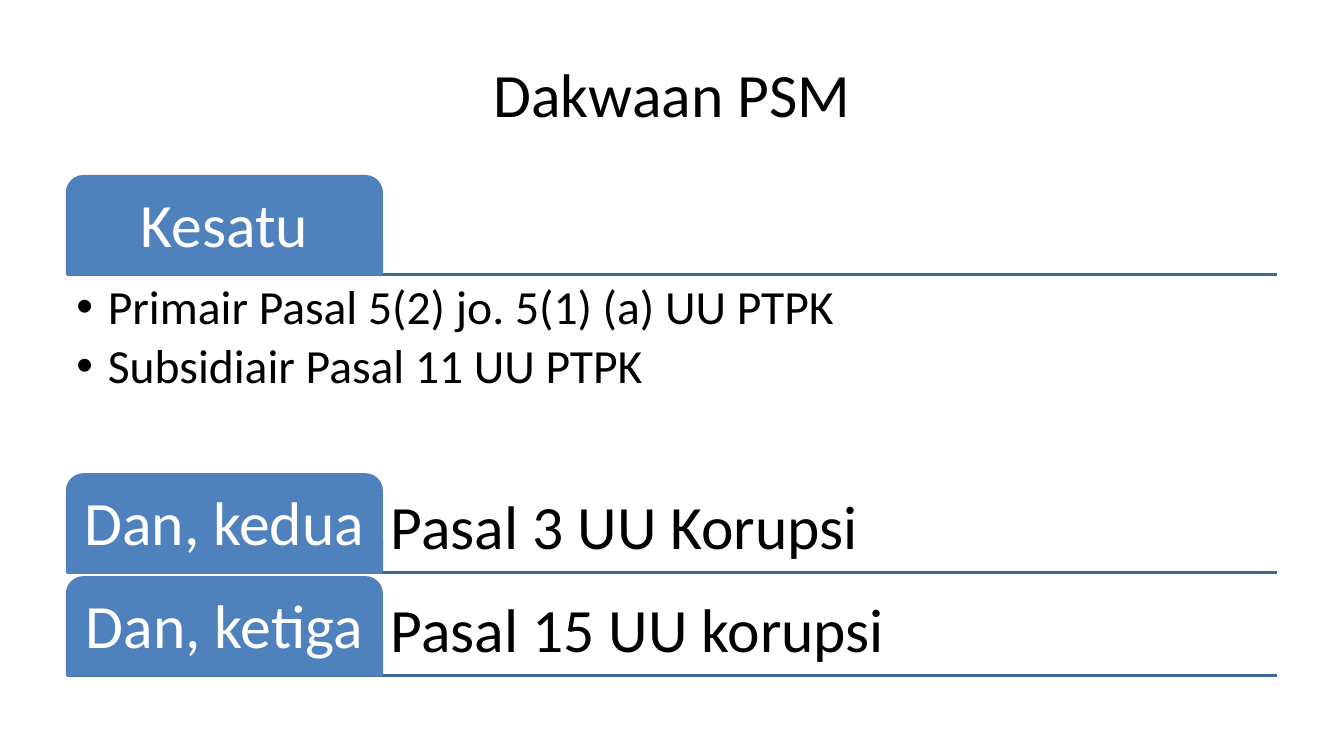
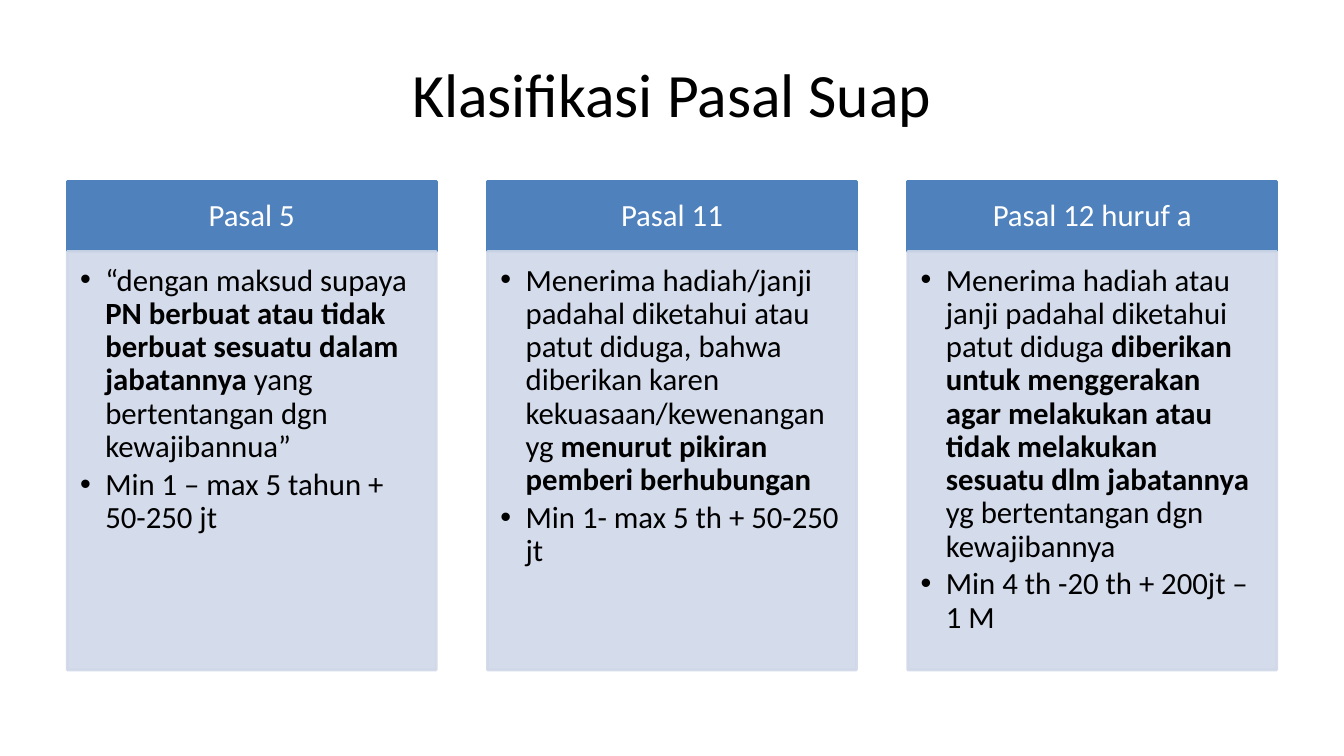
from pptx import Presentation
from pptx.dml.color import RGBColor
from pptx.enum.shapes import MSO_CONNECTOR, MSO_SHAPE
from pptx.enum.text import MSO_ANCHOR, PP_ALIGN
from pptx.oxml.ns import qn
from pptx.util import Pt
from lxml.etree import SubElement

FONT = "Calibri"
BLACK, WHITE = "000000", "FFFFFF"
BLUE, NAVY, PALE = "4F81BD", "3F6797", "D0D8E8"
LEFT, WIDTH = 48, 864


def color(code):
    return RGBColor.from_string(code)


class Deck:
    def __init__(self):
        self.prs = Presentation()
        self.prs.slide_width = Pt(960)
        self.prs.slide_height = Pt(540)

    def page(self, title):
        self.slide = self.prs.slides.add_slide(self.prs.slide_layouts[6])
        self.text(title, (LEFT, 21.6, WIDTH, 90), 44, (7.2, 3.6, 7.2, 3.6),
                  MSO_ANCHOR.MIDDLE, PP_ALIGN.CENTER, 1)

    def fill(self, shape, lines, size, pads, anchor, align=PP_ALIGN.LEFT,
             space=0.9, ink=BLACK, indent=0):
        frame = shape.text_frame
        frame.word_wrap = True
        frame.vertical_anchor = anchor
        (frame.margin_left, frame.margin_top,
         frame.margin_right, frame.margin_bottom) = map(Pt, pads)
        for i, line in enumerate(lines.split("\n")):
            para = frame.add_paragraph() if i else frame.paragraphs[0]
            if indent:
                self.bullet(para, indent)
                para.space_after = Pt(round(size * 0.15, 1))
            para.alignment = align
            para.line_spacing = space
            para.font.name = FONT
            para.font.size = Pt(size)
            para.font.color.rgb = color(ink)
            for j, part in enumerate(line.split("*")):
                if part:
                    run = para.add_run()
                    run.text = part
                    if j % 2:
                        run.font.bold = True

    def bullet(self, para, indent):
        props = para._p.get_or_add_pPr()
        props.set("marL", str(Pt(indent)))
        props.set("indent", str(-Pt(indent)))
        SubElement(props, qn("a:buFont"), typeface="Arial")
        SubElement(props, qn("a:buChar"), char="•")

    def text(self, lines, box, size, pads, anchor, *style, **more):
        shape = self.slide.shapes.add_textbox(*map(Pt, box))
        self.fill(shape, lines, size, pads, anchor, *style, **more)

    def block(self, kind, box, paint, alpha=None):
        shape = self.slide.shapes.add_shape(kind, *map(Pt, box))
        shape.shadow.inherit = False
        shape.line.width = Pt(2)
        for part in (shape.fill, shape.line.fill):
            part.solid()
            part.fore_color.rgb = color(paint)
        if alpha:
            for node in shape._element.spPr.iter(qn("a:srgbClr")):
                SubElement(node, qn("a:alpha"), val=str(alpha * 1000))
        return shape

    def rule(self, y):
        line = self.slide.shapes.add_connector(
            MSO_CONNECTOR.STRAIGHT, Pt(LEFT), Pt(y), Pt(LEFT + WIDTH), Pt(y))
        line.line.width = Pt(2)
        line.line.color.rgb = color(NAVY)
        SubElement(line._element.spPr, qn("a:effectLst"))

    def tab(self, label, y, wide, high, pads):
        shape = self.block(MSO_SHAPE.ROUND_2_SAME_RECTANGLE,
                           (LEFT, y, wide, high), BLUE)
        self.fill(shape, label, 44, pads, MSO_ANCHOR.MIDDLE,
                  PP_ALIGN.CENTER, ink=WHITE)

    def card(self, head, body, x, wide):
        top, high = 129.7, 50
        shape = self.block(MSO_SHAPE.RECTANGLE, (x, top, wide, high), BLUE)
        self.fill(shape, head, 22, (12.3, 7, 12.3, 7), MSO_ANCHOR.MIDDLE,
                  PP_ALIGN.CENTER, ink=WHITE)
        shape = self.block(MSO_SHAPE.RECTANGLE,
                           (x, top + high, wide, 298.8), PALE, 90)
        self.fill(shape, body, 22, (9.24, 9.24, 12.3, 13.9),
                  MSO_ANCHOR.TOP, indent=18)


def charges(deck):
    deck.page("Dakwaan PSM")
    wide, high = 224.6, 69.9
    pads = (6.6,) * 4
    rows = [("Kesatu", 126, ""),
            ("Dan, kedua", 339, "Pasal 3 UU Korupsi"),
            ("Dan, ketiga", 412.5, "Pasal 15 UU korupsi")]
    for label, y, note in rows:
        deck.rule(y + high)
        deck.tab(label, y, wide, high, pads)
        if note:
            deck.text(note, (LEFT + wide, y, WIDTH - wide, high), 44, pads,
                      MSO_ANCHOR.BOTTOM)
    deck.text("Primair Pasal 5(2) jo. 5(1) (a) UU PTPK\n"
              "Subsidiair Pasal 11 UU PTPK",
              (LEFT, rows[0][1] + high, WIDTH, 139.7), 34, pads,
              MSO_ANCHOR.TOP, indent=22.5)


def classes(deck):
    deck.page("Klasifikasi Pasal Suap")
    cards = [
        ("Pasal 5",
         "“dengan maksud supaya *PN berbuat atau tidak berbuat sesuatu "
         "dalam jabatannya* yang bertentangan dgn kewajibannua”\n"
         "Min 1 – max 5 tahun + 50-250 jt"),
        ("Pasal 11",
         "Menerima hadiah/janji padahal diketahui atau patut diduga, bahwa "
         "diberikan karen kekuasaan/kewenangan yg *menurut pikiran pemberi "
         "berhubungan*\nMin 1- max 5 th + 50-250 jt"),
        ("Pasal 12 huruf a",
         "Menerima hadiah atau janji padahal diketahui patut diduga "
         "*diberikan untuk menggerakan agar melakukan atau tidak melakukan "
         "sesuatu dlm jabatannya *yg bertentangan dgn kewajibannya\n"
         "Min 4 th -20 th + 200jt – 1 M"),
    ]
    wide = 263.6
    step = (WIDTH - wide) / (len(cards) - 1)
    for i, (head, body) in enumerate(cards):
        deck.card(head, body, LEFT + i * step, wide)


def main():
    deck = Deck()
    charges(deck)
    classes(deck)
    deck.prs.save("out.pptx")


if __name__ == "__main__":
    main()
